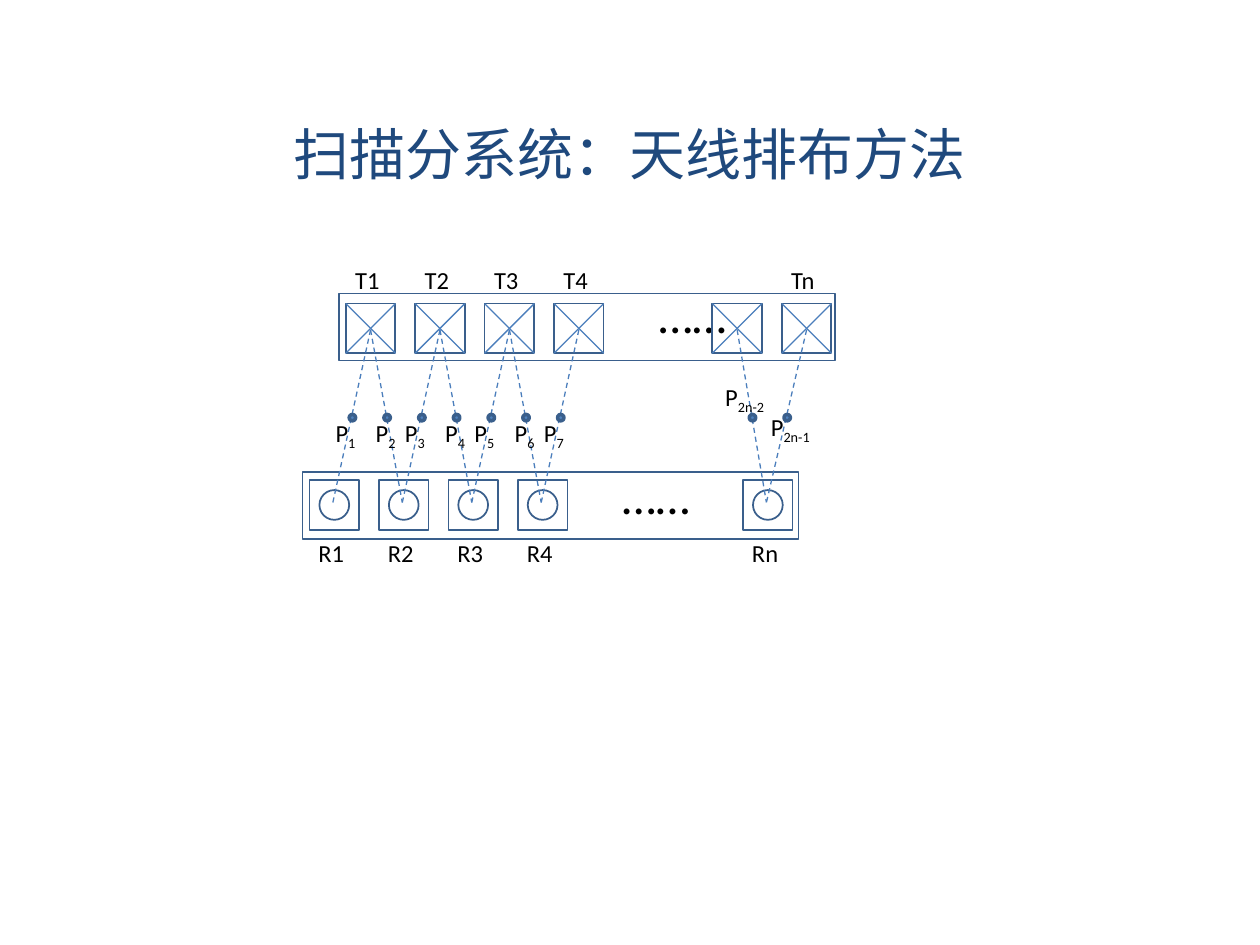
from dataclasses import dataclass

from lxml.etree import SubElement
from pptx import Presentation
from pptx.dml.color import RGBColor
from pptx.enum.dml import MSO_LINE
from pptx.enum.shapes import MSO_CONNECTOR, MSO_SHAPE
from pptx.enum.text import MSO_ANCHOR, MSO_AUTO_SIZE, PP_ALIGN
from pptx.oxml.ns import qn
from pptx.util import Cm, Pt


@dataclass(frozen=True)
class Theme:
    """Colours, line widths and type sizes of the slide."""
    font: str = "Calibri"
    ink: RGBColor = RGBColor(0x00, 0x00, 0x00)
    title: RGBColor = RGBColor(0x1F, 0x49, 0x7D)
    outline: RGBColor = RGBColor(0x3A, 0x5F, 0x8C)
    link: RGBColor = RGBColor(0x4B, 0x7E, 0xBC)
    dot: RGBColor = RGBColor(0x4F, 0x81, 0xBD)
    label_size: int = 14
    ellipsis_size: int = 28
    title_size: int = 32
    thin: float = 0.75
    medium: float = 1
    thick: float = 2


THEME = Theme()
PITCH = 1.4
SENDERS = {f"T{i + 1}": 7.47 + PITCH * i for i in range(4)}
SENDERS |= {"Tn-1": 14.86, "Tn": 16.26}
RECEIVERS = {f"R{i + 1}": 6.74 + PITCH * i for i in range(4)}
RECEIVERS["Rn"] = 15.48
SENDER_Y, RECEIVER_Y, DOT_Y = 6.62, 10.18, 8.42
UNIT, CIRCLE, DOT = 1, 0.6, 0.13


def add_outline(slide, kind, left, top, width, height, fill=None, weight=THEME.medium):
    """Draw an outlined preset shape, hollow unless a fill is given."""
    shape = slide.shapes.add_shape(kind, Cm(left), Cm(top), Cm(width), Cm(height))
    shape.shadow.inherit = False
    if fill is None:
        shape.fill.background()
    else:
        shape.fill.solid()
        shape.fill.fore_color.rgb = fill
    shape.line.color.rgb = THEME.outline
    shape.line.width = Pt(weight)
    return shape


def add_centred(slide, kind, x, y, size, **style):
    """Draw an outlined shape around a centre point."""
    return add_outline(slide, kind, x - size / 2, y - size / 2, size, size, **style)


def add_line(slide, start, end, dashed=False):
    """Draw a thin straight line between two points."""
    line = slide.shapes.add_connector(MSO_CONNECTOR.STRAIGHT, *map(Cm, start + end))
    line.line.color.rgb = THEME.link
    line.line.width = Pt(THEME.thin)
    if dashed:
        line.line.dash_style = MSO_LINE.DASH
    SubElement(line._element.spPr, qn("a:effectLst"))
    return line


def add_text(slide, text, left, top, width, height, size=THEME.label_size,
             color=THEME.ink, subscript=""):
    """Place a one-line text box, with an optional subscript."""
    box = slide.shapes.add_textbox(Cm(left), Cm(top), Cm(width), Cm(height))
    box.text_frame.word_wrap = False
    box.text_frame.auto_size = MSO_AUTO_SIZE.SHAPE_TO_FIT_TEXT
    para = box.text_frame.paragraphs[0]
    para.text = text
    if subscript:
        span = para.add_run()
        span.text = subscript
        span.font._element.set("baseline", "-25000")
    for span in para.runs:
        span.font.name = THEME.font
        span.font.size = Pt(size)
        span.font.color.rgb = color
    return box


def add_title(slide, text):
    """Place the centred slide title."""
    box = add_text(slide, text, 1.9, 2.13, 21.6, 1.9, THEME.title_size, THEME.title)
    box.text_frame.auto_size = MSO_AUTO_SIZE.NONE
    box.text_frame.word_wrap = True
    box.text_frame.vertical_anchor = MSO_ANCHOR.MIDDLE
    box.text_frame.paragraphs[0].alignment = PP_ALIGN.CENTER


def add_array(slide, left, top, ellipsis_left, ellipsis_top):
    """Draw the frame of an antenna array and its ellipsis."""
    add_outline(slide, MSO_SHAPE.RECTANGLE, left, top, 10, 1.35)
    add_text(slide, "……", ellipsis_left, ellipsis_top, 1.9, 1.45, THEME.ellipsis_size)


def add_sender(slide, x):
    """Draw a transmitting antenna as a crossed square."""
    add_centred(slide, MSO_SHAPE.RECTANGLE, x, SENDER_Y, UNIT)
    half = UNIT / 2
    for side in (half, -half):
        add_line(slide, (x + side, SENDER_Y - half), (x - side, SENDER_Y + half))


def add_receiver(slide, x):
    """Draw a receiving antenna as a circle in a square."""
    add_centred(slide, MSO_SHAPE.RECTANGLE, x, RECEIVER_Y, UNIT)
    add_centred(slide, MSO_SHAPE.OVAL, x, RECEIVER_Y, CIRCLE)


def add_phase_point(slide, sender, receiver, number, shift, top, width):
    """Link two antennas and mark the labelled point halfway."""
    start, end = SENDERS[sender], RECEIVERS[receiver]
    middle = (start + end) / 2
    add_line(slide, (start, SENDER_Y + 0.03), (end - 0.03, RECEIVER_Y - 0.05), dashed=True)
    add_centred(slide, MSO_SHAPE.OVAL, middle, DOT_Y, DOT, fill=THEME.dot, weight=THEME.thick)
    add_text(slide, "P", middle + shift, top, width, 0.86, subscript=number)


def main():
    """Build the antenna layout slide and save it."""
    deck = Presentation()
    deck.slide_width, deck.slide_height = Cm(25.4), Cm(19.05)
    slide = deck.slides.add_slide(deck.slide_layouts[6])

    add_title(slide, "扫描分系统：天线排布方法")
    add_array(slide, 6.83, 5.92, 13.03, 5.61)
    add_array(slide, 6.1, 9.52, 12.29, 9.25)
    for name, x in SENDERS.items():
        add_sender(slide, x)
        if name != "Tn-1":
            add_text(slide, name, x - 0.56, 5.21, 1.02, 0.86)
    for name, x in RECEIVERS.items():
        add_receiver(slide, x)
        add_text(slide, name, x - 0.57, 10.72, 1.04, 0.86)

    for number in range(1, 8):
        sender, receiver = f"T{(number + 1) // 2}", f"R{number // 2 + 1}"
        shift = -0.59 if number % 2 else -0.48
        add_phase_point(slide, sender, receiver, str(number), shift, 8.3, 0.94)
    add_phase_point(slide, "Tn-1", "Rn", "2n-2", -0.8, 7.57, 1.4)
    add_phase_point(slide, "Tn", "Rn", "2n-1", -0.58, 8.18, 1.4)

    deck.save("out.pptx")


if __name__ == "__main__":
    main()
